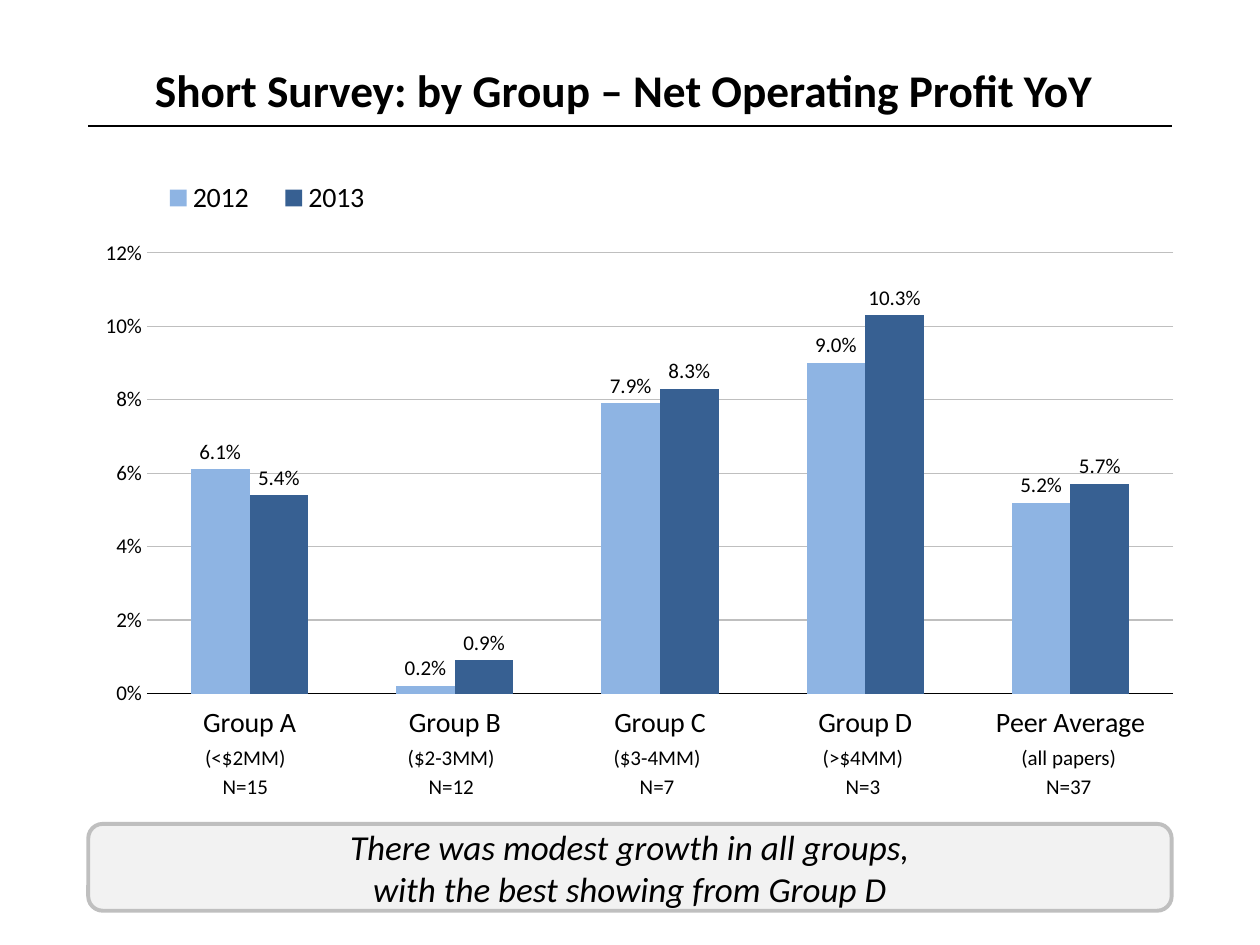
"""Build the slide on net operating profit by group, year over year."""
from lxml.etree import SubElement
from pptx import Presentation
from pptx.chart.data import CategoryChartData
from pptx.dml.color import RGBColor
from pptx.enum.chart import (XL_CHART_TYPE, XL_LABEL_POSITION, XL_LEGEND_POSITION,
                             XL_TICK_LABEL_POSITION, XL_TICK_MARK)
from pptx.enum.shapes import MSO_CONNECTOR, MSO_SHAPE
from pptx.enum.text import MSO_ANCHOR, PP_ALIGN
from pptx.oxml import parse_xml
from pptx.oxml.ns import nsdecls, qn
from pptx.util import Cm, Pt

BLACK = RGBColor(0x00, 0x00, 0x00)
GRAY = RGBColor(0xBF, 0xBF, 0xBF)
PALE = RGBColor(0xF2, 0xF2, 0xF2)
LIGHT_BLUE = RGBColor(0x8E, 0xB4, 0xE3)
DARK_BLUE = RGBColor(0x37, 0x60, 0x92)

TITLE = "Short Survey: by Group – Net Operating Profit YoY"
GROUPS = ["Group A", "Group B", "Group C", "Group D", "Peer Average"]
PROFIT = [("2012", LIGHT_BLUE, [0.061, 0.002, 0.079, 0.09, 0.052]),
          ("2013", DARK_BLUE, [0.054, 0.009, 0.083, 0.103, 0.057])]
DETAILS = [["(<$2MM)", "($2-3MM)", "($3-4MM)", "(>$4MM)", "(all papers)"],
           ["N=15", "N=12", "N=7", "N=3", "N=37"]]
TAKEAWAY = ["There was modest growth in all groups,",
            "with the best showing from Group D"]

LEFT, WIDTH = 1.78, 21.84
PLOT_AREA = {"x": 0.07, "y": 0.17, "w": 0.91, "h": 0.72}
PLOT_AREA = {"x": 0.074, "y": 0.165, "w": 0.905, "h": 0.723}
LEGEND_AREA = {"x": 0.07, "y": 0.03, "w": 0.22, "h": 0.09}


def box(*lengths):
    return [Cm(v) for v in lengths]


def set_font(font, size, **extra):
    for name, value in {"name": "Calibri", "size": Pt(size), **extra}.items():
        setattr(font, name, value)
    font.color.rgb = BLACK


def write(tf, lines, size, align=PP_ALIGN.CENTER, **extra):
    tf.word_wrap = True
    tf.vertical_anchor = MSO_ANCHOR.MIDDLE
    for i, line in enumerate(lines):
        p = tf.paragraphs[0] if i == 0 else tf.add_paragraph()
        p.alignment = align
        r = p.add_run()
        r.text = line
        set_font(r.font, size, **extra)


def manual_layout(area, inner=False):
    layout = parse_xml(f"<c:layout {nsdecls('c')}><c:manualLayout/></c:layout>")
    values = {"layoutTarget": "inner"} if inner else {}
    values.update(xMode="edge", yMode="edge", **area)
    for tag, value in values.items():
        SubElement(layout[0], qn(f"c:{tag}")).set("val", str(value))
    return layout


def add_title(s):
    title = s.shapes.title
    title.left, title.top, title.width, title.height = box(2.87, 1.07, 20.29, 1.47)
    write(title.text_frame, [TITLE], 25.9, PP_ALIGN.LEFT, bold=True)
    rule = s.shapes.add_connector(MSO_CONNECTOR.STRAIGHT,
                                  *box(LEFT, 2.54, LEFT + WIDTH, 2.54))
    rule.line.color.rgb = BLACK
    rule.line.width = Pt(0.75)
    SubElement(rule._element.spPr, qn("a:effectLst"))


def add_profit_chart(s):
    data = CategoryChartData(number_format="0.0%")
    data.categories = GROUPS
    for name, _, values in PROFIT:
        data.add_series(name, values)
    chart = s.shapes.add_chart(XL_CHART_TYPE.COLUMN_CLUSTERED,
                               *box(1.27, 3.07, 22.86, 12.29), data).chart
    set_font(chart.font, 18)
    chart.has_title = False

    plot = chart.plots[0]
    plot.gap_width, plot.overlap, plot.vary_by_categories = 150, 0, False
    for series, (_, color, _) in zip(plot.series, PROFIT):
        series.format.fill.solid()
        series.format.fill.fore_color.rgb = color
        labels = series.data_labels
        formats = {"show_value": True, "position": XL_LABEL_POSITION.OUTSIDE_END,
                   "number_format": "0.0%", "number_format_is_linked": False}
        for name, value in formats.items():
            setattr(labels, name, value)
        set_font(labels.font, 12)

    cat, val = chart.category_axis, chart.value_axis
    for axis, size in ((cat, 16), (val, 12)):
        axis.major_tick_mark = axis.minor_tick_mark = XL_TICK_MARK.NONE
        set_font(axis.tick_labels.font, size)
    cat.tick_label_position = XL_TICK_LABEL_POSITION.LOW
    val.minimum_scale, val.maximum_scale, val.major_unit = 0, 0.12, 0.02
    val.tick_labels.number_format = "0%"
    val.tick_labels.number_format_is_linked = False
    val.format.line.fill.background()
    for line, color in ((cat.format.line, BLACK),
                        (val.major_gridlines.format.line, GRAY)):
        line.color.rgb = color
        line.width = Pt(0.75)

    chart.has_legend = True
    legend = chart.legend
    legend.position = XL_LEGEND_POSITION.TOP
    legend.include_in_layout = False
    set_font(legend.font, 16)
    legend._element.find(qn("c:legendPos")).addnext(manual_layout(LEGEND_AREA))
    plot_area = plot._element.getparent()
    for old in plot_area.findall(qn("c:layout")):
        plot_area.remove(old)
    plot_area.insert(0, manual_layout(PLOT_AREA, inner=True))


def add_details(s):
    table = s.shapes.add_table(len(DETAILS), len(GROUPS),
                               *box(2.87, 15.01, 20.75, 1.14)).table
    table.first_row = table.horz_banding = False
    for row, texts in zip(table.rows, DETAILS):
        for cell, text in zip(row.cells, texts):
            cell.fill.background()
            cell.vertical_anchor = MSO_ANCHOR.MIDDLE
            for side in ("left", "right", "top", "bottom"):
                setattr(cell, f"margin_{side}", 0)
            p = cell.text_frame.paragraphs[0]
            p.alignment = PP_ALIGN.CENTER
            r = p.add_run()
            r.text = text
            set_font(r.font, 12)


def add_takeaway(s):
    sp = s.shapes.add_shape(MSO_SHAPE.ROUNDED_RECTANGLE,
                            *box(LEFT, 16.61, WIDTH, 1.75))
    sp.shadow.inherit = False
    sp.fill.solid()
    sp.fill.fore_color.rgb = PALE
    sp.line.color.rgb = GRAY
    sp.line.width = Pt(2.25)
    write(sp.text_frame, TAKEAWAY, 20, italic=True)


def main():
    prs = Presentation()
    prs.slide_width, prs.slide_height = box(25.4, 19.05)
    s = prs.slides.add_slide(prs.slide_layouts[5])
    for add_part in (add_takeaway, add_profit_chart, add_title, add_details):
        add_part(s)
    prs.save("out.pptx")


if __name__ == "__main__":
    main()
